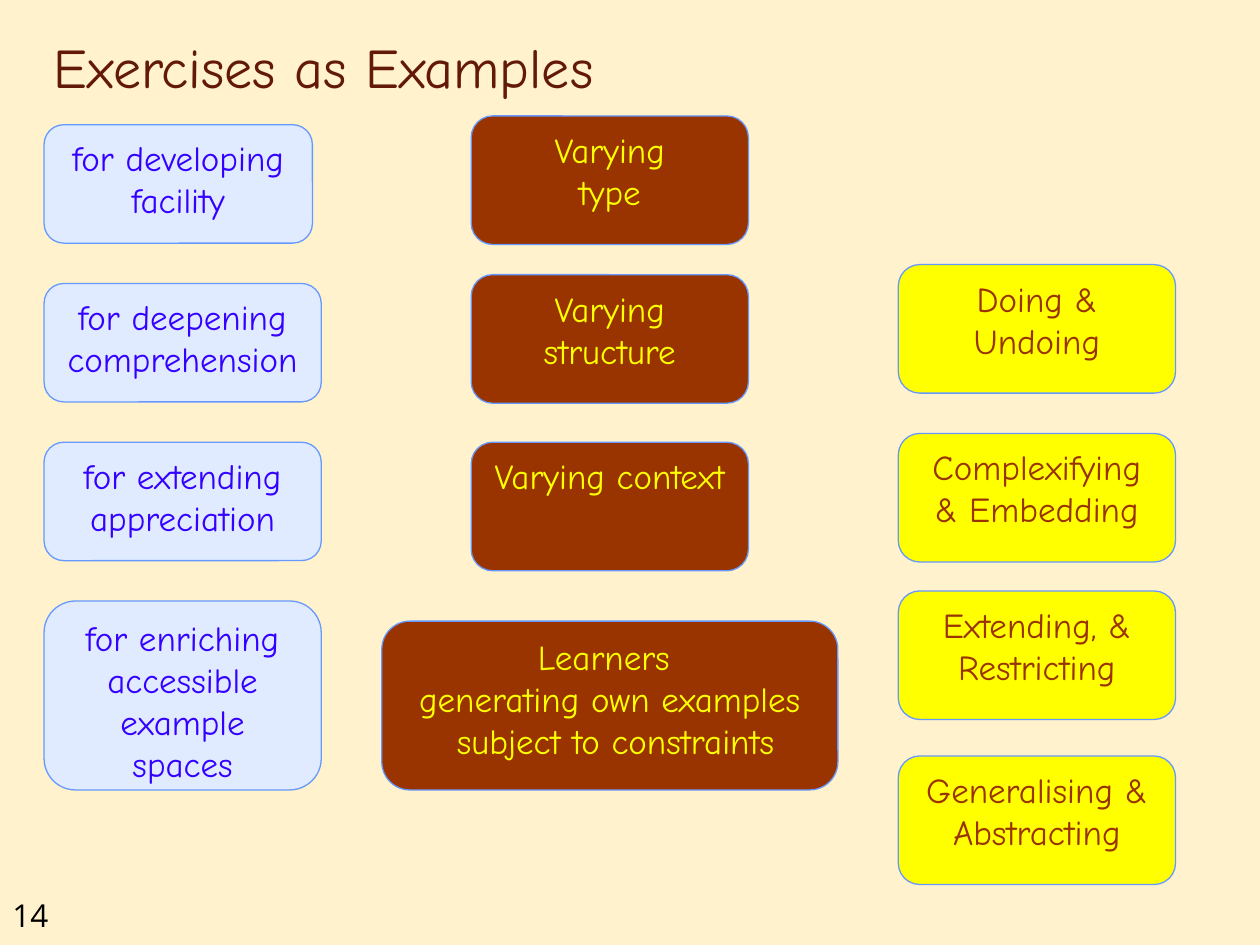
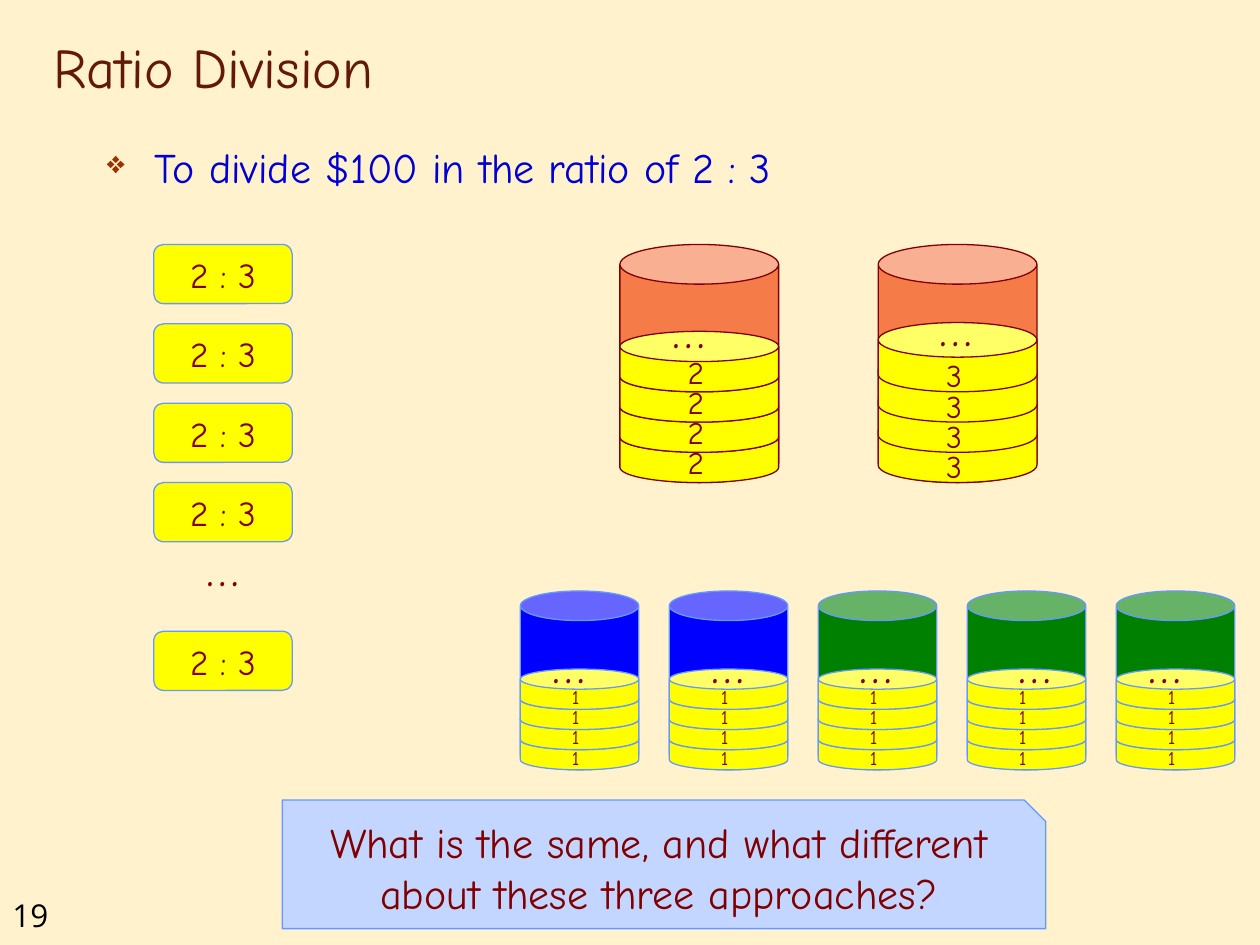
import pptx
import pptx.dml.color
import pptx.enum.shapes
import pptx.enum.text
import pptx.oxml
import pptx.oxml.ns
import pptx.util
from pptx.util import Inches

COLORS = {
    "background": "FFF2CC", "title": "631908", "number": "000000",
    "outline": "6699FF", "purpose": "E0EBFF", "purpose_text": "3400FF",
    "brown": "993300", "yellow": "FFFF00", "maroon": "800000",
    "body": "0000D4", "orange": "F57B49", "blue": "0000FF",
    "green": "008000", "question": "C2D6FF",
}
FONT = "Comic Neue"
SHAPES = pptx.enum.shapes.MSO_SHAPE
ANCHORS = pptx.enum.text.MSO_ANCHOR
CENTER = pptx.enum.text.PP_ALIGN.CENTER


def rgb(name):
    """Return the named colour."""
    return pptx.dml.color.RGBColor.from_string(COLORS[name])


def write(shape, text, size, color, font=FONT, align=None, anchor=ANCHORS.TOP):
    """Write paragraphs, given as a list, with line breaks at newlines."""
    frame = shape.text_frame
    frame.word_wrap = True
    frame.vertical_anchor = anchor
    for index, content in enumerate(text if isinstance(text, list) else [text]):
        paragraph = frame.add_paragraph() if index else frame.paragraphs[0]
        paragraph.alignment = align
        for line_index, line in enumerate(content.split("\n")):
            if line_index:
                paragraph.add_line_break()
            run = paragraph.add_run()
            run.text = line
            run.font.size = pptx.util.Pt(size)
            run.font.name = font
            run.font.color.rgb = rgb(color)


def add_label(slide, box, text, size, color, **options):
    """Add a text box and return it."""
    shape = slide.shapes.add_textbox(*map(Inches, box))
    write(shape, text, size, color, **options)
    return shape


def add_panel(slide, kind, box, fill, line="outline"):
    """Add a filled, outlined preset shape and return it."""
    shape = slide.shapes.add_shape(kind, *map(Inches, box))
    shape.shadow.inherit = False
    shape.fill.solid()
    shape.fill.fore_color.rgb = rgb(fill)
    shape.line.color.rgb = rgb(line)
    shape.line.width = pptx.util.Pt(0.75)
    return shape


def add_card(slide, box, text, fill, color):
    """Add a rounded card with centred text."""
    card = add_panel(slide, SHAPES.ROUNDED_RECTANGLE, box, fill)
    write(card, text, 20, color, align=CENTER)


def add_card_column(slide, left, cards, fill, color):
    """Add cards given as top, height, text and optional width."""
    for top, height, text, *width in cards:
        add_card(slide, (left, top, *(width or [2.2]), height), text, fill, color)


def add_base(presentation, title, number):
    """Add a slide with the shared background, title and number."""
    slide = presentation.slides.add_slide(presentation.slide_layouts[6])
    slide.background.fill.solid()
    slide.background.fill.fore_color.rgb = rgb("background")
    add_label(slide, (0, 7.06, 0.75, 0.4), number, 18, "number", font="Open Sans")
    add_label(slide, (0.33, 0.17, 8.5, 0.67), title, 32, "title", anchor=ANCHORS.BOTTOM)
    return slide


def add_bullet(slide, box, text):
    """Add a line of body text with a diamond bullet."""
    paragraph = add_label(slide, box, text, 24, "body").text_frame.paragraphs[0]
    properties = paragraph._p.get_or_add_pPr()
    properties.set("marL", str(Inches(0.38)))
    properties.set("indent", str(-Inches(0.38)))
    namespace = pptx.oxml.ns.nsdecls("a")
    for xml in (
        f'<a:buClr {namespace}><a:srgbClr val="{COLORS["brown"]}"/></a:buClr>',
        f'<a:buSzPct {namespace} val="75000"/>',
        f'<a:buChar {namespace} char="❖"/>',
    ):
        properties.append(pptx.oxml.parse_xml(xml))


def add_ellipsis(slide, left, top):
    """Add the dots that stand for more of the same."""
    add_label(slide, (left, top, 0.63, 0.57), "…", 28, "maroon")


def add_container(slide, box, fill, line, disc_height, step, digit, size, digit_box, dots):
    """Add a can holding four numbered discs, with dots above them."""
    left, top, width, height = box
    add_panel(slide, SHAPES.CAN, box, fill, line)
    digit_left, digit_top, digit_width, digit_height = digit_box
    for level in range(4):
        disc_top = top + height - disc_height - level * step
        disc = add_panel(slide, SHAPES.CAN, (left, disc_top, width, disc_height), "yellow", line)
        disc.adjustments[0] = 0.5
        add_label(slide, (left + digit_left, disc_top + digit_top, digit_width, digit_height),
                  digit, size, "maroon")
    add_ellipsis(slide, left + dots[0], top + dots[1])


def build_exercises(presentation):
    """Build the slide of purposes, variations and tasks."""
    slide = add_base(presentation, "Exercises as Examples", "14")
    add_card_column(slide, 0.35, [
        (0.99, 0.94, "for developing facility", 2.13),
        (2.25, 0.94, "for deepening comprehension"),
        (3.51, 0.94, "for extending appreciation"),
        (4.77, 1.5, "for enriching accessible example spaces"),
    ], "purpose", "purpose_text")
    add_card_column(slide, 3.74, [
        (0.92, 1.02, "Varying\ntype"),
        (2.18, 1.02, "Varying\nstructure"),
        (3.51, 1.02, "Varying context"),
    ], "brown", "yellow")
    add_card(slide, (3.03, 4.93, 3.62, 1.34),
             "Learners \ngenerating own examples\n subject to constraints", "brown", "yellow")
    add_card_column(slide, 7.13, [
        (2.1, 1.02, "Doing & Undoing"),
        (3.44, 1.02, ["Complexifying", "& Embedding"]),
        (4.69, 1.02, "Extending, & Restricting"),
        (6, 1.02, "Generalising & Abstracting"),
    ], "yellow", "brown")


def build_ratio(presentation):
    """Build the slide of three ways to divide in a ratio."""
    slide = add_base(presentation, "Ratio Division", "19")
    add_bullet(slide, (0.75, 1.07, 6.38, 0.71), "To divide $100 in the ratio of 2 : 3")
    for top in [1.94 + 0.63 * row for row in range(4)] + [5.01]:
        add_card(slide, (1.22, top, 1.1, 0.47), "2 : 3", "yellow", "maroon")
    add_ellipsis(slide, 1.54, 4.22)
    for left, digit, disc_height, digit_top, dots in (
        (4.92, "2", 0.48, 0.12, (0.32, 0.39)),
        (6.97, "3", 0.55, 0.22, (0.39, 0.37)),
    ):
        add_container(slide, (left, 1.94, 1.26, 1.89), "orange", "maroon", disc_height, 0.24,
                      digit, 18, (0.44, digit_top, 0.35, 0.35), dots)
    pitch = (8.86 - 4.13) / 4
    for index, (fill, dots_left) in enumerate((
        ("blue", 0.16), ("blue", 0.24), ("green", 0.23), ("green", 0.31), ("green", 0.16),
    )):
        add_container(slide, (4.13 + index * pitch, 4.69, 0.94, 1.42), fill, "outline", 0.32, 0.16,
                      "1", 11, (0.31, 0.08, 0.39, 0.29), (dots_left, 0.3))
    question = add_panel(slide, SHAPES.SNIP_1_RECTANGLE, (2.24, 6.35, 6.06, 1.02), "question")
    write(question, "What is the same, and what different\nabout these three approaches?",
          24, "maroon", align=CENTER)


def main():
    """Build and save the presentation."""
    presentation = pptx.Presentation()
    presentation.slide_width = Inches(10)
    presentation.slide_height = Inches(7.5)
    build_exercises(presentation)
    build_ratio(presentation)
    presentation.save("out.pptx")


if __name__ == "__main__":
    main()
